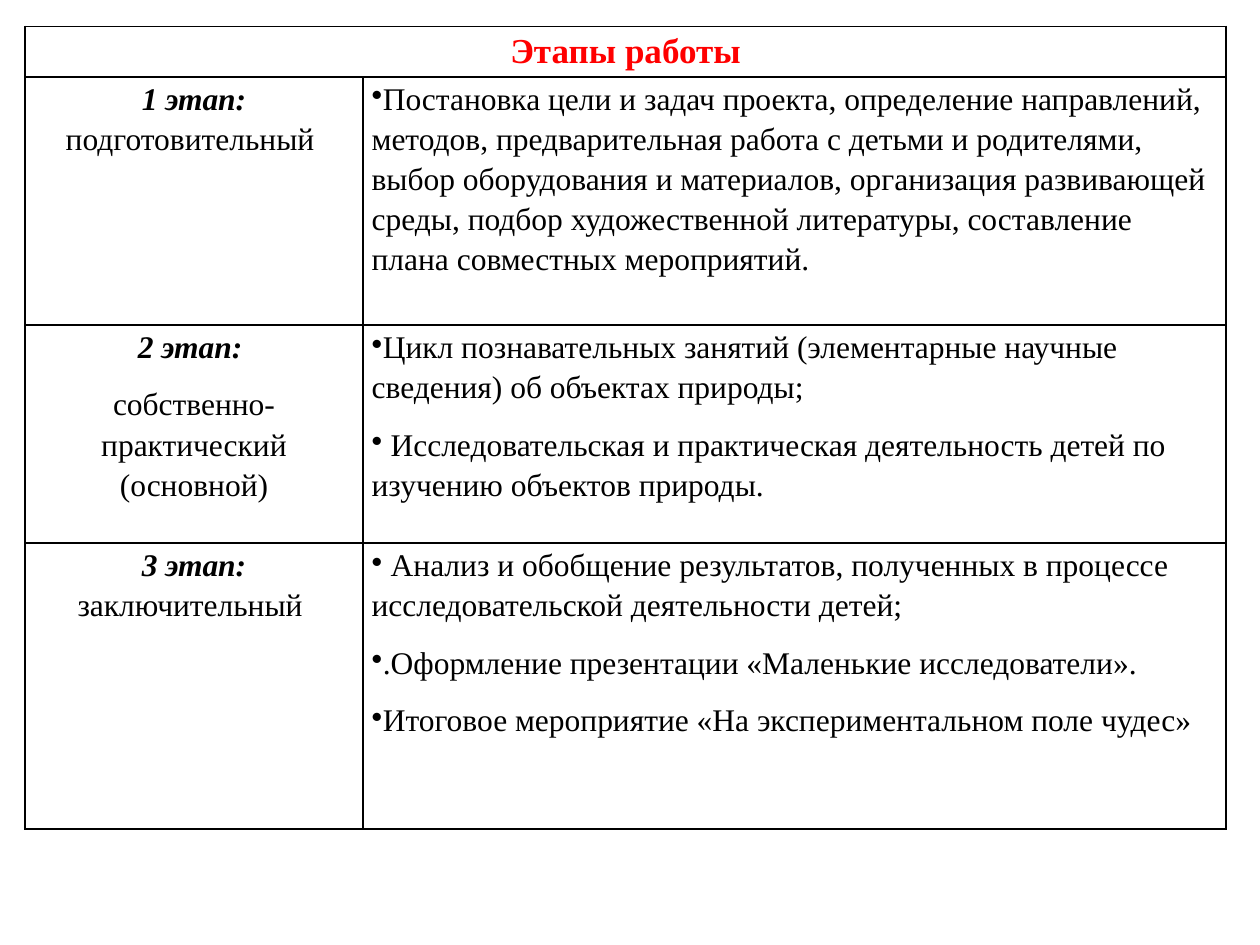
from lxml import etree
from pptx import Presentation
from pptx.dml.color import RGBColor
from pptx.enum.text import PP_ALIGN
from pptx.oxml.ns import qn
from pptx.util import Inches, Pt

CENTER, LEFT = PP_ALIGN.CENTER, PP_ALIGN.LEFT
FONT = "Times New Roman"
BLACK, RED = "000000", "FF0000"

TITLE = "Этапы работы"
STAGES = [
    ([["1 этап: ", "подготовительный "]],
     ["Постановка цели и задач проекта, определение направлений, методов, "
      "предварительная работа с детьми и родителями, выбор оборудования и "
      "материалов, организация развивающей среды, подбор художественной "
      "литературы, составление плана совместных мероприятий."]),
    ([["2 этап: "], ["собственно-практический (основной)"]],
     ["Цикл познавательных занятий (элементарные научные сведения) об объектах природы;",
      " Исследовательская и практическая деятельность детей по изучению объектов природы."]),
    ([["3 этап: ", "заключительный "]],
     [" Анализ и обобщение результатов, полученных в процессе исследовательской "
      "деятельности детей;",
      ".Оформление презентации «Маленькие исследователи».",
      "Итоговое мероприятие «На экспериментальном поле чудес»"]),
]
WIDTHS = [2.68, 6.85]
HEIGHTS = [0.4, 1.97, 1.73, 2.27]


def color(code):
    return RGBColor.from_string(code)


def write(par, text, size=18, code=BLACK, bold=False, italic=False):
    run = par.add_run()
    run.text = text
    font = run.font
    font.name, font.size = FONT, Pt(size)
    font.bold, font.italic = bold, italic
    font.color.rgb = color(code)


def start(cell, index, align=LEFT, bullet=False):
    frame = cell.text_frame
    par = frame.add_paragraph() if index else frame.paragraphs[0]
    par.alignment = align
    par.line_spacing = 1.15
    par.space_after = Pt(10)
    if bullet:
        props = par._p.get_or_add_pPr()
        props.set("marL", "0")
        props.set("indent", "0")
        etree.SubElement(props, qn("a:buChar"), char="•")
    return par


def frame_cell(cell):
    cell.margin_left = cell.margin_right = Inches(0.07)
    cell.margin_top = cell.margin_bottom = 0
    cell.fill.background()
    props = cell._tc.get_or_add_tcPr()
    for spot, side in enumerate(["lnL", "lnR", "lnT", "lnB"]):
        line = etree.Element(qn("a:" + side), w=str(Pt(1)))
        fill = etree.SubElement(line, qn("a:solidFill"))
        etree.SubElement(fill, qn("a:srgbClr"), val=BLACK)
        props.insert(spot, line)


def main():
    deck = Presentation()
    deck.slide_width, deck.slide_height = Inches(10), Inches(7.5)
    slide = deck.slides.add_slide(deck.slide_layouts[6])
    table = slide.shapes.add_table(
        len(HEIGHTS), len(WIDTHS), Inches(0.2), Inches(0.21),
        Inches(sum(WIDTHS)), Inches(sum(HEIGHTS))).table
    table.first_row = table.horz_banding = False
    for col, width in zip(table.columns, WIDTHS):
        col.width = Inches(width)
    for row, height in zip(table.rows, HEIGHTS):
        row.height = Inches(height)
    for cell in table.iter_cells():
        frame_cell(cell)

    head = table.cell(0, 0)
    head.merge(table.cell(0, 1))
    write(start(head, 0, CENTER), TITLE, size=20, code=RED, bold=True)

    for row, (names, tasks) in enumerate(STAGES, 1):
        for i, parts in enumerate(names):
            par = start(table.cell(row, 0), i, CENTER)
            for j, part in enumerate(parts):
                first = i == j == 0
                write(par, part, bold=first, italic=first)
        for i, task in enumerate(tasks):
            write(start(table.cell(row, 1), i, bullet=True), task)

    deck.save("out.pptx")


if __name__ == "__main__":
    main()
